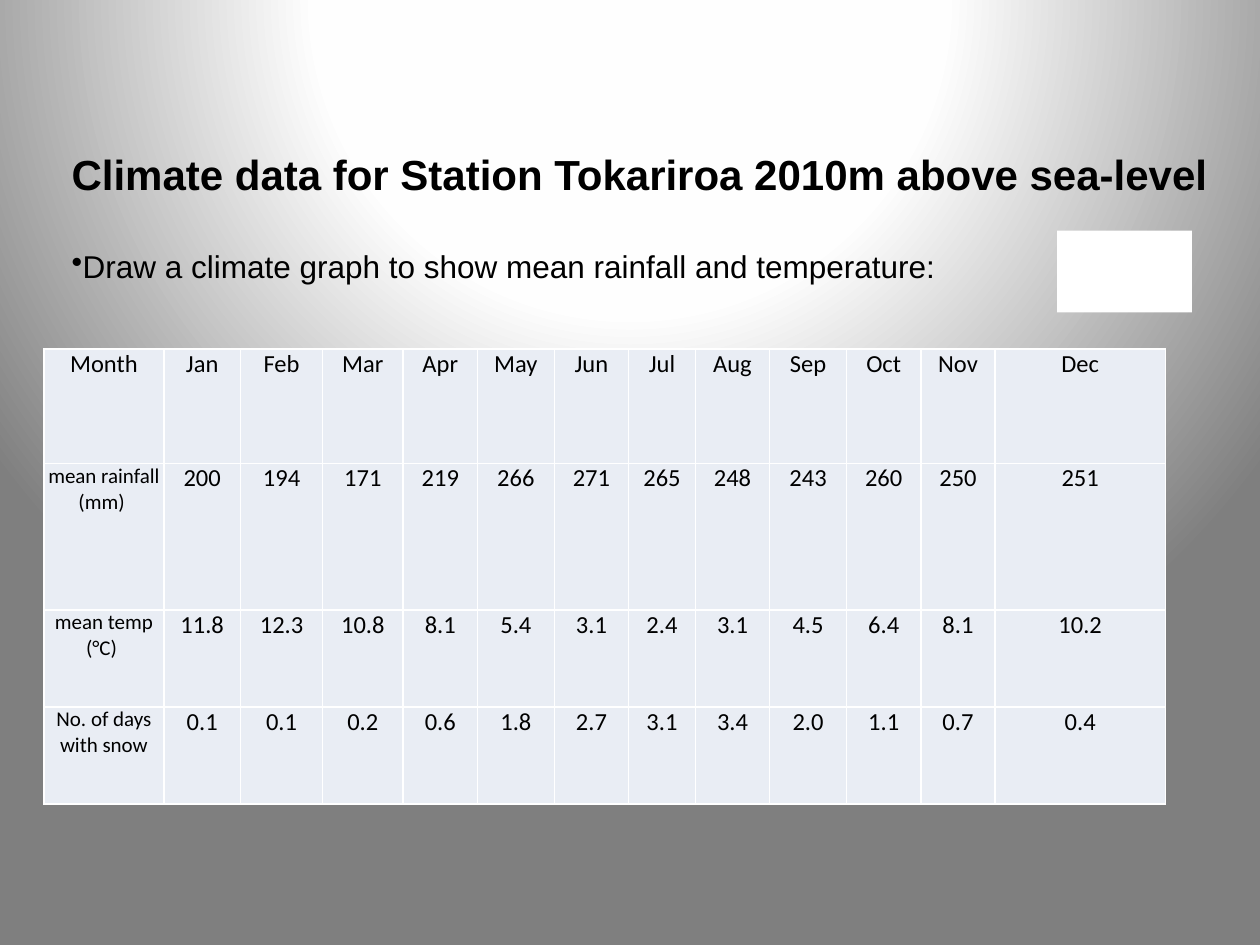
from dataclasses import dataclass

from pptx import Presentation
from pptx.dml.color import RGBColor
from pptx.enum.shapes import MSO_SHAPE
from pptx.enum.text import MSO_ANCHOR, PP_ALIGN
from pptx.oxml import parse_xml
from pptx.oxml.ns import nsdecls
from pptx.util import Inches, Pt

RECTANGLE = MSO_SHAPE.RECTANGLE
MIDDLE = MSO_ANCHOR.MIDDLE
CENTER, LEFT = PP_ALIGN.CENTER, PP_ALIGN.LEFT

GRID_COLUMNS, GRID_ROWS = 1000, 750
SLIDE_WIDTH, SLIDE_HEIGHT = Inches(10), Inches(7.5)


@dataclass(frozen=True)
class Theme:
    """Colours, fonts and type sizes of the slide."""
    ink: str = "000000"
    panel: str = "FFFFFF"
    cell: str = "E9EDF4"
    border: str = "FFFFFF"
    glow: tuple = ((0, "FFFFFF"), (40, "FEFEFE"), (100, "7F7F7F"))
    heading_font: str = "Arial"
    table_font: str = "Calibri"
    title: int = 24
    task: int = 18
    value: int = 14
    label: int = 12
    border_width: int = 1


THEME = Theme()

COLUMN_WIDTHS = (95, 61, 65, 64, 59, 61, 59, 53, 59, 61, 59, 59, 135)
ROW_HEIGHTS = (91, 116, 77, 77)
CLIMATE = (
    ("Month", "Jan Feb Mar Apr May Jun Jul Aug Sep Oct Nov Dec"),
    ("mean rainfall (mm) ", "200 194 171 219 266 271 265 248 243 260 250 251"),
    ("mean temp\n(°C) ", "11.8 12.3 10.8 8.1 5.4 3.1 2.4 3.1 4.5 6.4 8.1 10.2"),
    ("No. of days with snow", "0.1 0.1 0.2 0.6 1.8 2.7 3.1 3.4 2.0 1.1 0.7 0.4"),
)


def across(columns):
    """Return the length of a number of grid columns."""
    return int(SLIDE_WIDTH * columns / GRID_COLUMNS)


def down(rows):
    """Return the length of a number of grid rows."""
    return int(SLIDE_HEIGHT * rows / GRID_ROWS)


def place(left, top, width, height):
    """Turn a grid area into slide lengths."""
    return across(left), down(top), across(width), down(height)


def write(para, text, size, font, bold=False, align=LEFT, before=0, indent=0, bullet=None):
    """Fill a paragraph with one formatted span, indented equally on both sides."""
    para.alignment = align
    para.space_before = Pt(before)
    span = para.add_run()
    span.text = text
    span.font.size, span.font.name, span.font.bold = Pt(size), font, bold
    span.font.color.rgb = RGBColor.from_string(THEME.ink)
    properties = para._p.get_or_add_pPr()
    if indent:
        for margin in ("marL", "marR"):
            properties.set(margin, str(across(indent)))
    if bullet:
        properties.append(parse_xml(f'<a:buChar {nsdecls("a")} char="{bullet}"/>'))


def paint_background(page):
    """Give the page a round glow that is centred above its top edge."""
    stops = "".join(
        f'<a:gs pos="{share * 1000}"><a:srgbClr val="{colour}"/></a:gs>'
        for share, colour in THEME.glow)
    page._element.cSld.insert(0, parse_xml(
        f'<p:bg {nsdecls("p", "a")}><p:bgPr><a:gradFill rotWithShape="1">'
        f'<a:gsLst>{stops}</a:gsLst><a:path path="circle">'
        '<a:fillToRect l="50000" t="-80000" r="50000" b="180000"/></a:path>'
        '</a:gradFill><a:effectLst/></p:bgPr></p:bg>'))


def style_cell(cell):
    """Set the fill, margins and borders of a table cell."""
    cell.margin_left = cell.margin_right = cell.margin_top = cell.margin_bottom = 0
    cell.fill.solid()
    cell.fill.fore_color.rgb = RGBColor.from_string(THEME.cell)
    properties = cell._tc.get_or_add_tcPr()
    for position, side in enumerate(("lnL", "lnR", "lnT", "lnB")):
        properties.insert(position, parse_xml(
            f'<a:{side} {nsdecls("a")} w="{Pt(THEME.border_width)}"><a:solidFill>'
            f'<a:srgbClr val="{THEME.border}"/></a:solidFill></a:{side}>'))


def fill_cell(cell, text, size, indent=0):
    """Style a cell and write each line of its text as a paragraph."""
    style_cell(cell)
    frame = cell.text_frame
    for number, line in enumerate(text.split("\n")):
        para = frame.add_paragraph() if number else frame.paragraphs[0]
        write(para, line, size, THEME.table_font, align=CENTER, indent=indent)


def add_climate_table(page):
    """Add the table of monthly climate values."""
    area = place(35, 277, sum(COLUMN_WIDTHS), sum(ROW_HEIGHTS))
    table = page.shapes.add_table(len(ROW_HEIGHTS), len(COLUMN_WIDTHS), *area).table
    for column, width in zip(table.columns, COLUMN_WIDTHS):
        column.width = across(width)
    for number, (row, height) in enumerate(zip(table.rows, ROW_HEIGHTS)):
        row.height = down(height)
        label, values = CLIMATE[number]
        is_header = number == 0
        fill_cell(row.cells[0], label, THEME.value if is_header else THEME.label)
        for month, value in enumerate(values.split(), start=1):
            fill_cell(row.cells[month], value, THEME.value, indent=5 if is_header else 0)


def add_panel(page):
    """Add the plain panel beside the task."""
    panel = page.shapes.add_shape(RECTANGLE, *place(839, 183, 107, 65))
    panel.shadow.inherit = False
    panel.fill.solid()
    panel.fill.fore_color.rgb = RGBColor.from_string(THEME.panel)
    panel.line.fill.background()


def add_heading(page):
    """Add the title with the bulleted task below it."""
    box = page.shapes.add_textbox(*place(47, 111, 953, 136))
    frame = box.text_frame
    frame.word_wrap = True
    frame.vertical_anchor = MIDDLE
    frame.margin_bottom = down(19)
    write(frame.paragraphs[0], "Climate data for Station Tokariroa 2010m above sea-level",
          THEME.title, THEME.heading_font, bold=True)
    write(frame.add_paragraph(), "Draw a climate graph to show mean rainfall and temperature:",
          THEME.task, THEME.heading_font, before=27.6, bullet="•")


def main():
    """Build the climate slide and save it."""
    deck = Presentation()
    deck.slide_width, deck.slide_height = SLIDE_WIDTH, SLIDE_HEIGHT
    page = deck.slides.add_slide(deck.slide_layouts[6])
    paint_background(page)
    add_climate_table(page)
    add_panel(page)
    add_heading(page)
    deck.save("out.pptx")


if __name__ == "__main__":
    main()
